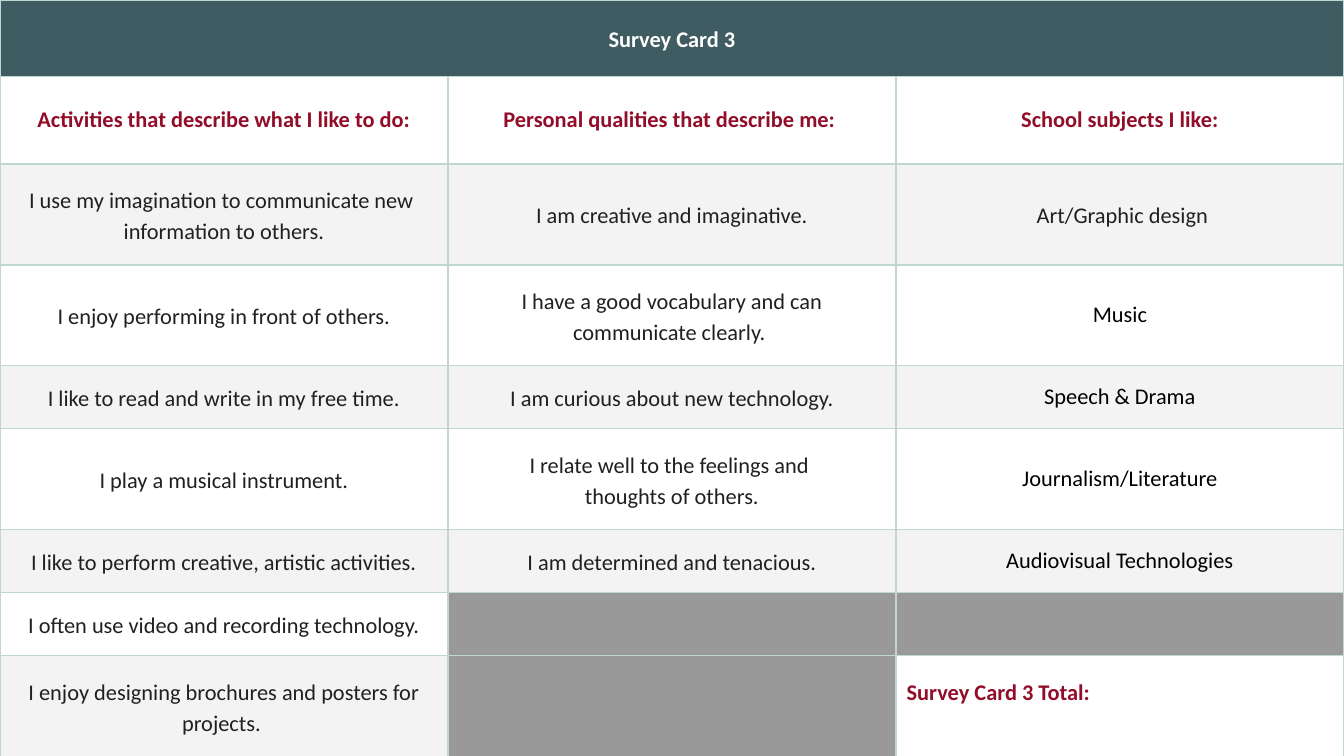
from lxml import etree
from pptx import Presentation
from pptx import util as u
from pptx.dml.color import RGBColor
from pptx.enum import text as t
from pptx.oxml import ns

HUES = {"teal": "3E5C61", "edge": "BED7D3", "band": "F3F3F3", "white": "FFFFFF",
        "gray": "999999", "red": "910D28", "ink": "231F20", "black": "000000"}
TALL, LOW = 0.75, 0.47
ROWS = [0.57, 0.65, TALL, TALL, LOW, TALL, LOW, LOW, TALL]
TEXTS = [
    ["Survey Card 3", "", ""],
    ["Activities that describe what I like to do:",
     "Personal qualities that describe me: ", "School subjects I like:"],
    ["I use my imagination to communicate new \ninformation to others.",
     "I am creative and imaginative.", " Art/Graphic design"],
    ["I enjoy performing in front of others.",
     "I have a good vocabulary and can communicate clearly. ", "Music"],
    ["I like to read and write in my free time.",
     "I am curious about new technology.", "Speech & Drama"],
    ["I play a musical instrument.",
     "I relate well to the feelings and \nthoughts of others.", "Journalism/Literature"],
    ["I like to perform creative, artistic activities.",
     "I am determined and tenacious.", "Audiovisual Technologies"],
    ["I often use video and recording technology.", "", ""],
    ["I enjoy designing brochures and posters for projects. ", "", "Survey Card 3 Total:"],
]
LAST = len(ROWS) - 1


def edge(cell):
    """Draw a thin line on all four sides; call before filling the cell."""
    props = cell._tc.get_or_add_tcPr()
    for side in ("lnL", "lnR", "lnT", "lnB"):
        line = etree.SubElement(props, ns.qn("a:" + side), w=str(u.Pt(1)))
        fill = etree.SubElement(line, ns.qn("a:solidFill"))
        etree.SubElement(fill, ns.qn("a:srgbClr"), val=HUES["edge"])


deck = Presentation()
wide = u.Inches(10)
tall = wide * 9 // 16
deck.slide_width, deck.slide_height = wide, tall
slide = deck.slides.add_slide(deck.slide_layouts[6])
grid = slide.shapes.add_table(len(ROWS), 3, 0, 0, wide, tall).table
for col in grid.columns:
    col.width = wide // 3
for row, high in zip(grid.rows, ROWS):
    row.height = u.Inches(high)
grid.cell(0, 0).merge(grid.cell(0, 2))

for r, words in enumerate(TEXTS):
    for c, word in enumerate(words):
        cell = grid.cell(r, c)
        total = (r, c) == (LAST, 2)
        head = r == 1 or total
        if r == 0:
            back, hue = "teal", "white"
        elif not word:
            back, hue = "gray", "black"
        else:
            back = "band" if r % 2 == 0 and not total else "white"
            hue = "red" if head else "black" if c == 2 and r > 2 else "ink"
        edge(cell)
        cell.fill.solid()
        cell.fill.fore_color.rgb = RGBColor.from_string(HUES[back])
        cell.vertical_anchor = t.MSO_ANCHOR.MIDDLE
        cell.margin_left = cell.margin_right = u.Inches(0.08)
        cell.margin_top = u.Inches(0.08)
        cell.margin_bottom = u.Inches(0.28 if total else 0.08)
        if not word:
            continue
        cell.text_frame.text = word
        for para in cell.text_frame.paragraphs:
            para.alignment = t.PP_ALIGN.LEFT if total else t.PP_ALIGN.CENTER
            if head:
                para.space_before = u.Pt(10)
            elif hue != "black":
                para.line_spacing = 1.15
            if r == 0:
                para.space_after = u.Pt(6)
            for run in para.runs:
                run.font.name, run.font.size = "Calibri", u.Pt(12)
                run.font.bold = head or r == 0
                run.font.color.rgb = RGBColor.from_string(HUES[hue])

deck.save("out.pptx")
